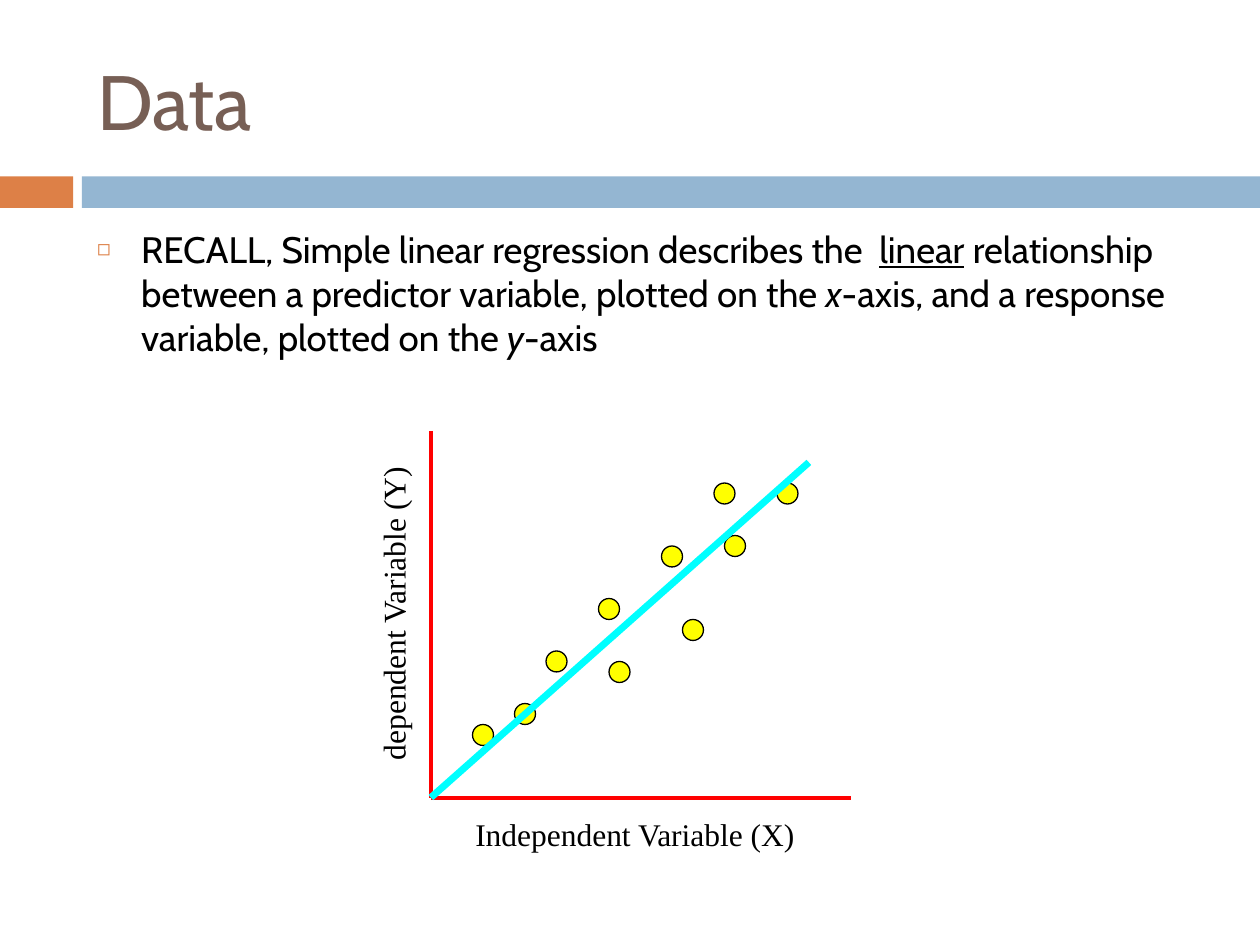
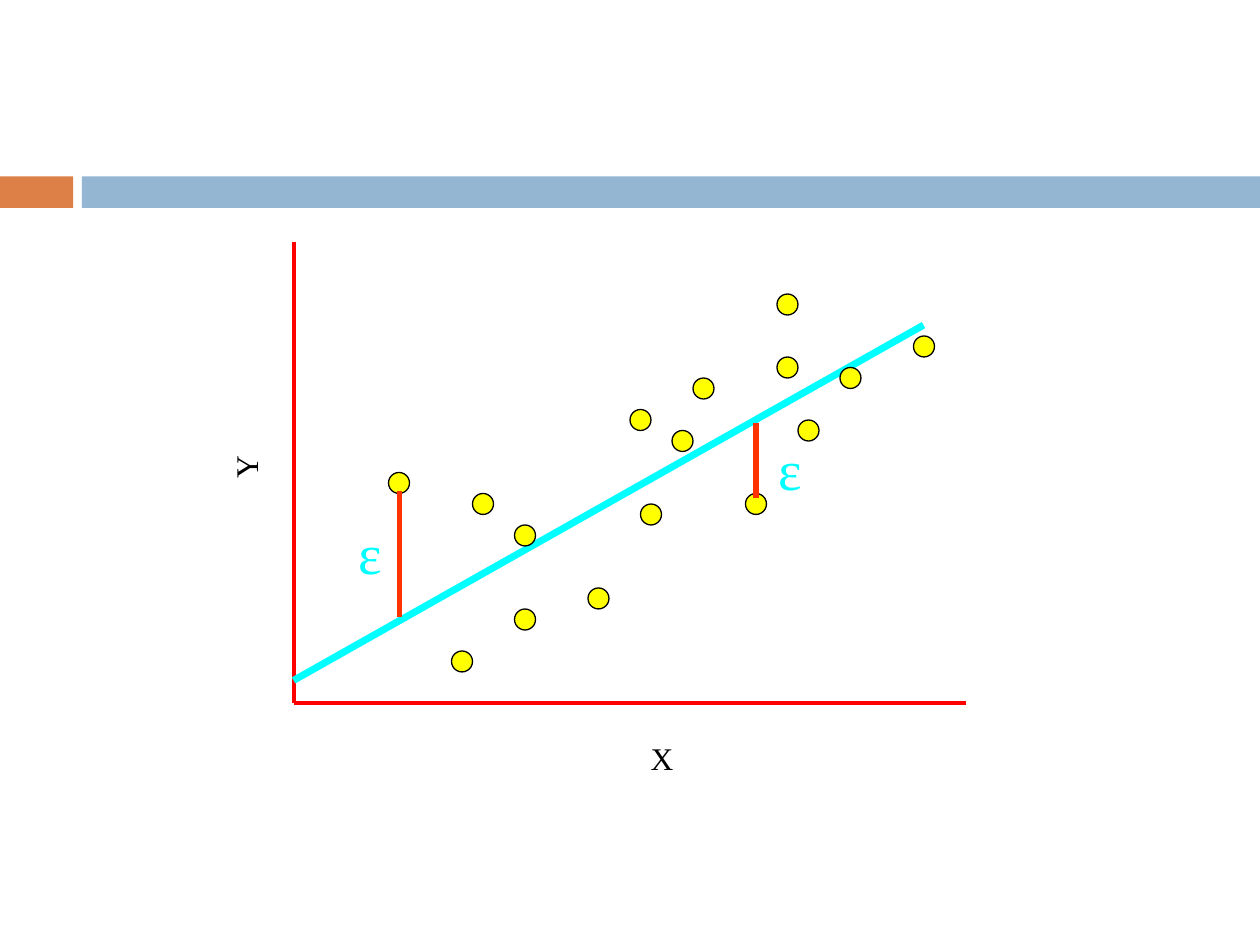
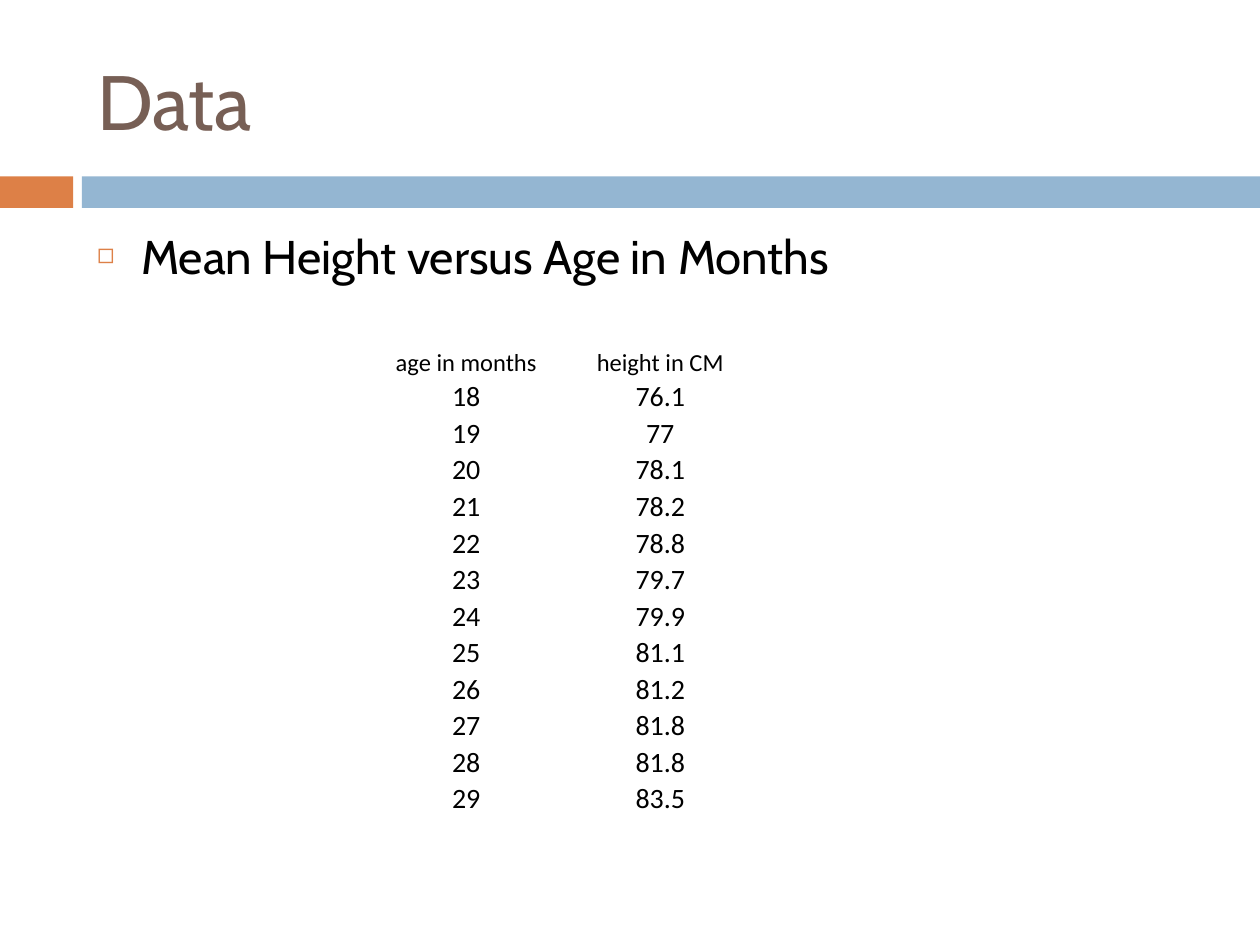
from dataclasses import dataclass

from lxml import etree
from pptx import Presentation
from pptx import util as u
from pptx.dml.color import RGBColor
from pptx.enum import shapes, text
from pptx.oxml import ns


@dataclass(frozen=True)
class Theme:
    orange: str = "DD8047"
    blue: str = "94B6D2"
    brown: str = "775F55"
    black: str = "000000"
    red: str = "FF0000"
    flame: str = "FF3300"
    cyan: str = "00FFFF"
    yellow: str = "FFFF00"
    head: str = "Cabin"
    plot: str = "Times New Roman"
    grid: str = "Calibri"
    title: int = 44
    recall: int = 21
    body: int = 27
    label: int = 18
    error: int = 32
    top: int = 14
    cell: int = 16


@dataclass(frozen=True)
class Box:
    left: float
    top: float
    width: float
    height: float

    def place(self) -> tuple:
        return tuple(map(u.Inches, (self.left, self.top, self.width, self.height)))


@dataclass(frozen=True)
class Line:
    start: tuple[float, float]
    end: tuple[float, float]
    color: str
    width: float


@dataclass(frozen=True)
class Label:
    words: str
    box: Box
    turn: int = 0


@dataclass(frozen=True)
class Span:
    words: str
    under: bool = False
    slant: bool = False


T = Theme()
TITLE = Box(0.67, 0.25, 8.92, 1.08)
BODY = Box(0.67, 1.75, 8.92, 4.92)
BANDS = ((Box(0, 1.4, 0.58, 0.25), T.orange), (Box(0.65, 1.4, 9.35, 0.25), T.blue))
STEP = 1 / 12
AXIS = 2.25
TREND = 4
ERROR = 3

RECALL = (
    Span("RECALL, Simple linear regression describes the  "),
    Span("linear", under=True),
    Span(" relationship  between a predictor variable, plotted on the "),
    Span("x", slant=True),
    Span("-axis, and a response variable, plotted on the "),
    Span("y", slant=True),
    Span("-axis"),
)
FIT_DOTS = (
    (74, 46), (63, 52), (57, 57), (45, 69), (69, 51),
    (58, 63), (52, 62), (49, 67), (68, 46), (65, 59),
)
ERROR_DOTS = (
    (37, 45), (43, 62), (49, 58), (56, 56), (87, 32), (45, 47), (61, 48), (60, 39),
    (64, 41), (66, 36), (71, 47), (76, 40), (74, 34), (74, 28), (80, 35), (49, 50),
)
HEIGHTS = (76.1, 77, 78.1, 78.2, 78.8, 79.7, 79.9, 81.1, 81.2, 81.8, 81.8, 83.5)
ROWS = [("age in months", "height in CM"), *zip(range(18, 30), HEIGHTS)]


def style(font, face: str, size: int, color: str) -> None:
    font.name = face
    font.size = u.Pt(size)
    font.color.rgb = RGBColor.from_string(color)


def paint(shape, color: str) -> None:
    shape.shadow.inherit = False
    shape.fill.solid()
    shape.fill.fore_color.rgb = RGBColor.from_string(color)


def new_slide(deck, layout: int):
    slide = deck.slides.add_slide(deck.slide_layouts[layout])
    for box, color in BANDS:
        band = slide.shapes.add_shape(shapes.MSO_SHAPE.RECTANGLE, *box.place())
        paint(band, color)
        band.line.fill.background()
    return slide


def move(shape, box: Box) -> None:
    shape.left, shape.top, shape.width, shape.height = box.place()


def add_title(slide, words: str) -> None:
    title = slide.shapes.title
    move(title, TITLE)
    frame = title.text_frame
    frame.text = words
    frame.auto_size = text.MSO_AUTO_SIZE.NONE
    frame.vertical_anchor = text.MSO_ANCHOR.MIDDLE
    para = frame.paragraphs[0]
    para.alignment = text.PP_ALIGN.LEFT
    style(para.font, T.head, T.title, T.brown)


def add_mark(para) -> None:
    props = para._p.get_or_add_pPr()
    props.set("marL", str(u.Inches(0.35)))
    props.set("indent", str(u.Inches(-0.35)))
    tint = etree.SubElement(props, ns.qn("a:buClr"))
    etree.SubElement(tint, ns.qn("a:srgbClr"), val=T.orange)
    etree.SubElement(props, ns.qn("a:buSzPct"), val="60000")
    etree.SubElement(props, ns.qn("a:buChar"), char="◻")


def add_body(slide, spans: tuple[Span, ...], size: int) -> None:
    body = slide.placeholders[1]
    move(body, BODY)
    frame = body.text_frame
    frame.auto_size = text.MSO_AUTO_SIZE.NONE
    para = frame.paragraphs[0]
    para.space_before = u.Pt(7)
    add_mark(para)
    style(para.font, T.head, size, T.black)
    for span in spans:
        run = para.add_run()
        run.text = span.words
        if span.under:
            run.font.underline = True
        if span.slant:
            run.font.italic = True


def add_line(group, line: Line) -> None:
    ends = map(u.Inches, (*line.start, *line.end))
    link = group.add_connector(shapes.MSO_CONNECTOR.STRAIGHT, *ends)
    link.line.color.rgb = RGBColor.from_string(line.color)
    link.line.width = u.Pt(line.width)
    etree.SubElement(link._element.spPr, ns.qn("a:effectLst"))


def add_axes(group, peak: float, left: float, base: float, right: float) -> None:
    add_line(group, Line((left, peak), (left, base), T.red, AXIS))
    add_line(group, Line((left, base), (right, base), T.red, AXIS))


def add_text(group, label: Label, size: int, color: str):
    box = group.add_textbox(*label.box.place())
    box.rotation = label.turn
    frame = box.text_frame
    frame.word_wrap = True
    frame.text = label.words
    para = frame.paragraphs[0]
    style(para.font, T.plot, size, color)
    return box


def add_names(group, *labels: Label) -> None:
    for label in labels:
        frame = add_text(group, label, T.label, T.black).text_frame
        frame.auto_size = text.MSO_AUTO_SIZE.SHAPE_TO_FIT_TEXT
        frame.paragraphs[0].alignment = text.PP_ALIGN.CENTER


def add_dots(group, dots: tuple[tuple[int, int], ...]) -> None:
    for left, top in dots:
        box = Box(left * STEP, top * STEP, 2 * STEP, 2 * STEP)
        dot = group.add_shape(shapes.MSO_SHAPE.OVAL, *box.place())
        paint(dot, T.yellow)
        dot.line.color.rgb = RGBColor.from_string(T.black)
        dot.line.width = u.Pt(0.75)


def add_grid(slide) -> None:
    box = Box(3, 2.75, 3.08, 3.73)
    table = slide.shapes.add_table(len(ROWS), 2, *box.place()).table
    table.first_row = table.horz_banding = False
    for col, width in zip(table.columns, (1.4, 1.68)):
        col.width = u.Inches(width)
    for i, row in enumerate(ROWS):
        table.rows[i].height = u.Inches(0.29 if i else 0.25)
        for j, value in enumerate(row):
            cell = table.cell(i, j)
            cell.text = str(value)
            cell.fill.background()
            cell.vertical_anchor = text.MSO_ANCHOR.BOTTOM
            cell.margin_left = cell.margin_right = cell.margin_top = u.Inches(0.01)
            cell.margin_bottom = 0
            para = cell.text_frame.paragraphs[0]
            para.alignment = text.PP_ALIGN.CENTER
            style(para.font, T.grid, T.cell if i else T.top, T.black)


def draw_fit(deck) -> None:
    slide = new_slide(deck, 1)
    add_title(slide, "Data")
    add_body(slide, RECALL, T.recall)
    group = slide.shapes.add_group_shape().shapes
    add_axes(group, 3.42, 3.42, 6.33, 6.75)
    add_dots(group, FIT_DOTS)
    add_names(
        group,
        Label("Independent Variable (X)", Box(3.33, 6.42, 3.42, 0.4)),
        Label("dependent Variable (Y)", Box(1.58, 4.67, 3.08, 0.4), 270),
    )
    add_line(group, Line((3.42, 6.33), (6.42, 3.67), T.cyan, TREND))


def draw_errors(deck) -> None:
    slide = new_slide(deck, 6)
    group = slide.shapes.add_group_shape().shapes
    add_axes(group, 1.92, 2.33, 5.58, 7.67)
    add_names(
        group,
        Label("X", Box(4.17, 5.82, 2.17, 0.4)),
        Label("Y", Box(0.41, 3.51, 3.08, 0.4), 270),
    )
    add_line(group, Line((2.33, 5.4), (7.33, 2.58), T.cyan, TREND))
    add_dots(group, ERROR_DOTS)
    for x, top, base, box in (
        (6, 3.36, 3.95, Box(6.08, 3.4, 0.33, 0.75)),
        (3.17, 3.9, 4.9, Box(2.75, 4.07, 0.33, 0.67)),
    ):
        add_line(group, Line((x, top), (x, base), T.flame, ERROR))
        add_text(group, Label("ε", box), T.error, T.cyan)


def draw_table(deck) -> None:
    slide = new_slide(deck, 1)
    add_title(slide, "Data")
    add_body(slide, (Span("Mean Height versus Age in Months"),), T.body)
    add_grid(slide)


def main() -> None:
    deck = Presentation()
    deck.slide_width, deck.slide_height = u.Inches(10), u.Inches(7.5)
    for draw in (draw_fit, draw_errors, draw_table):
        draw(deck)
    deck.save("out.pptx")


if __name__ == "__main__":
    main()
